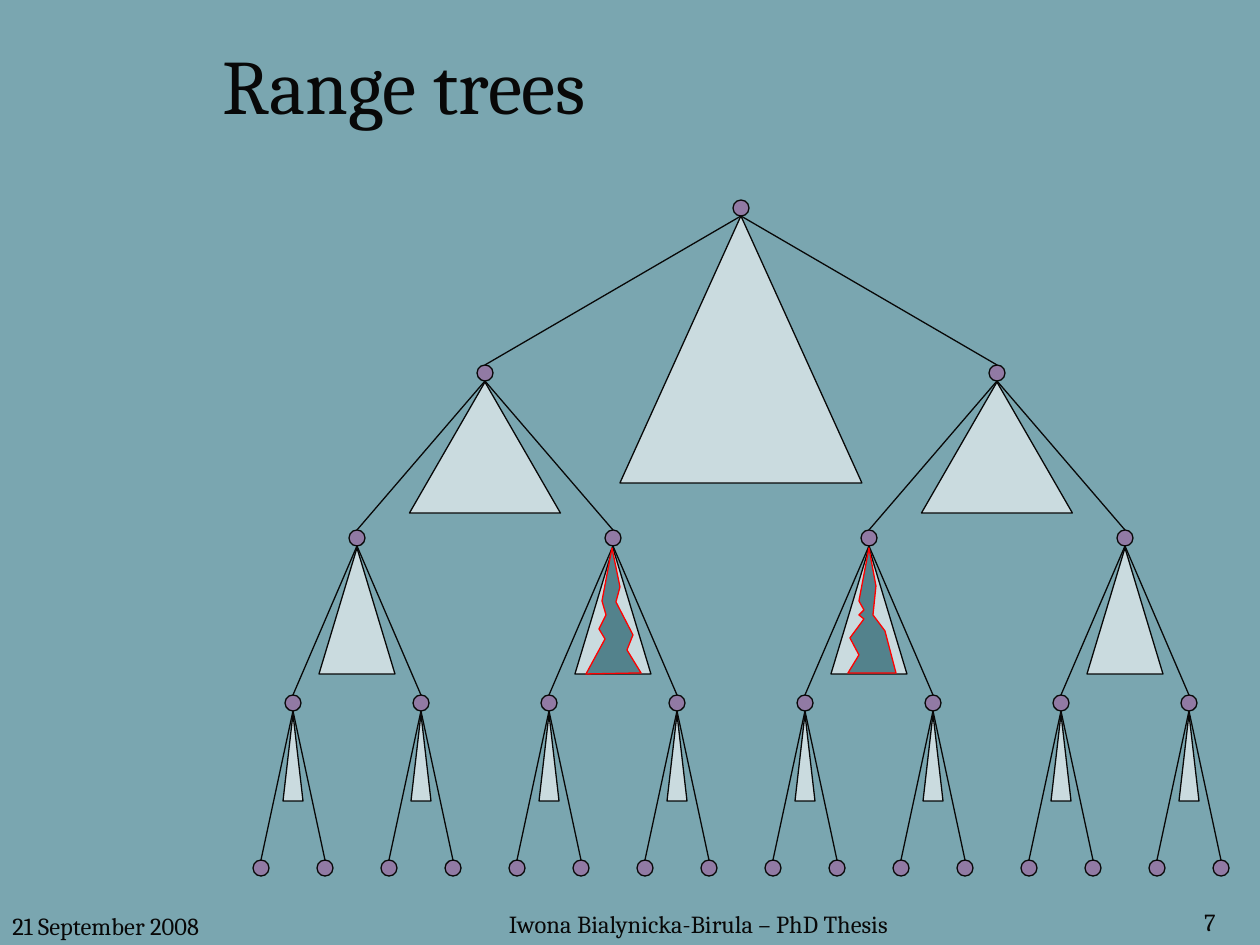
import pptx
import pptx.dml.color
import pptx.enum.shapes
import pptx.enum.text
import pptx.oxml.ns
import pptx.util
from lxml import etree

SCALE = 914400 / 126  # EMU per px
FONT = "Cambria"
COLORS = {
    "background": "7AA6B0",
    "ink": "080808",
    "node": "917AA4",
    "subtree": "CADBDF",
    "range": "53828C",
    "range_line": "FF0000",
}
SHAPE = pptx.enum.shapes.MSO_SHAPE
ALIGN = pptx.enum.text.PP_ALIGN

# Tree geometry
LEAVES = 16
LEAF_X, LEAF_STEP = 261, 64
ROOT_TOP, LEVEL_STEP = 200, 165
NODE = 16
SUBTREE_SIZES = [(242, 267), (151, 131), (76, 126), (20, 87)]

# Outlines of the visited parts, clockwise from the bottom of the left side
RANGES = [
    [(612, 548), (602, 601), (606, 615), (599, 629), (605, 639), (586, 674),
     (641, 673), (627, 650), (633, 635), (616, 602), (620, 587)],
    [(869, 548), (859, 601), (864, 610), (859, 615), (864, 619), (850, 638),
     (859, 655), (848, 673), (896, 673), (885, 631), (873, 615), (876, 586)],
]

FOOTERS = [
    ("21 September 2008", (0, 905, 252, 40), ALIGN.LEFT),
    ("Iwona Bialynicka-Birula – PhD Thesis", (284, 903, 829, 40), ALIGN.CENTER),
    ("7", (1134, 901, 94, 44), ALIGN.RIGHT),
]


def px(n):
    return pptx.util.Emu(round(n * SCALE))


def rgb(name):
    return pptx.dml.color.RGBColor.from_string(COLORS[name])


def set_line(line, color="ink"):
    line.color.rgb = rgb(color)
    line.width = pptx.util.Pt(0.75)


def style_shape(sp, fill, line="ink"):
    sp.shadow.inherit = False
    sp.fill.solid()
    sp.fill.fore_color.rgb = rgb(fill)
    set_line(sp.line, line)


def set_text(sp, text, size, align):
    tf = sp.text_frame
    tf.word_wrap = True
    p = tf.paragraphs[0]
    p.alignment = align
    r = p.add_run()
    r.text = text
    for name, value in {"name": FONT, "size": pptx.util.Pt(size)}.items():
        setattr(r.font, name, value)
    r.font.color.rgb = rgb("ink")


def add_title(s, text, box):
    sp = s.shapes.title
    for name, value in zip(("left", "top", "width", "height"), box):
        setattr(sp, name, px(value))
    sp.text_frame.vertical_anchor = pptx.enum.text.MSO_ANCHOR.MIDDLE
    set_text(sp, text, 44, ALIGN.LEFT)


def add_footer(s, text, box, align):
    set_text(s.shapes.add_textbox(*map(px, box)), text, 14, align)


def add_preset(s, kind, center, top, width, height, fill):
    sp = s.shapes.add_shape(
        kind, px(center - width / 2), px(top), px(width), px(height))
    style_shape(sp, fill)
    return sp


def add_edge(s, x, y, child):
    """Join the bottom of a parent node to the top of its child."""
    c = s.shapes.add_connector(
        pptx.enum.shapes.MSO_CONNECTOR.STRAIGHT, px(x), px(y), px(x), px(y))
    c.end_connect(child, 0)
    set_line(c.line)
    etree.SubElement(c._element.spPr, pptx.oxml.ns.qn("a:effectLst"))


def add_range(s, points):
    fb = s.shapes.build_freeform(*points[0], scale=SCALE)
    fb.add_line_segments(points[1:], close=True)
    style_shape(fb.convert_to_shape(), "range", "range_line")


def tree_levels():
    """Node centres from the root down; a parent sits midway over its children."""
    levels = [[LEAF_X + LEAF_STEP * i for i in range(LEAVES)]]
    while len(levels[0]) > 1:
        xs = levels[0]
        levels.insert(0, [(a + b) / 2 for a, b in zip(xs[::2], xs[1::2])])
    return levels


def add_tree(s):
    levels = tree_levels()
    tops = [ROOT_TOP + LEVEL_STEP * i for i in range(len(levels))]

    # Nodes
    nodes = [[add_preset(s, SHAPE.OVAL, x, top, NODE, NODE, "node") for x in xs]
             for xs, top in zip(levels, tops)]

    # Edges
    for xs, top, children in zip(levels, tops, nodes[1:]):
        for i, child in enumerate(children):
            add_edge(s, xs[i // 2], top + NODE, child)

    # Secondary trees, a little further below their node on each level
    for i, (width, height) in enumerate(SUBTREE_SIZES):
        for x in levels[i]:
            add_preset(s, SHAPE.ISOSCELES_TRIANGLE, x, tops[i] + NODE + i,
                       width, height, "subtree")


def main():
    prs = pptx.Presentation()
    prs.slide_width, prs.slide_height = px(1260), px(945)
    s = prs.slides.add_slide(prs.slide_layouts[5])
    s.background.fill.solid()
    s.background.fill.fore_color.rgb = rgb("background")

    add_title(s, "Range trees", (210, 10, 1017, 147))
    for footer in FOOTERS:
        add_footer(s, *footer)
    add_tree(s)
    for points in RANGES:
        add_range(s, points)

    prs.save("out.pptx")


if __name__ == "__main__":
    main()
